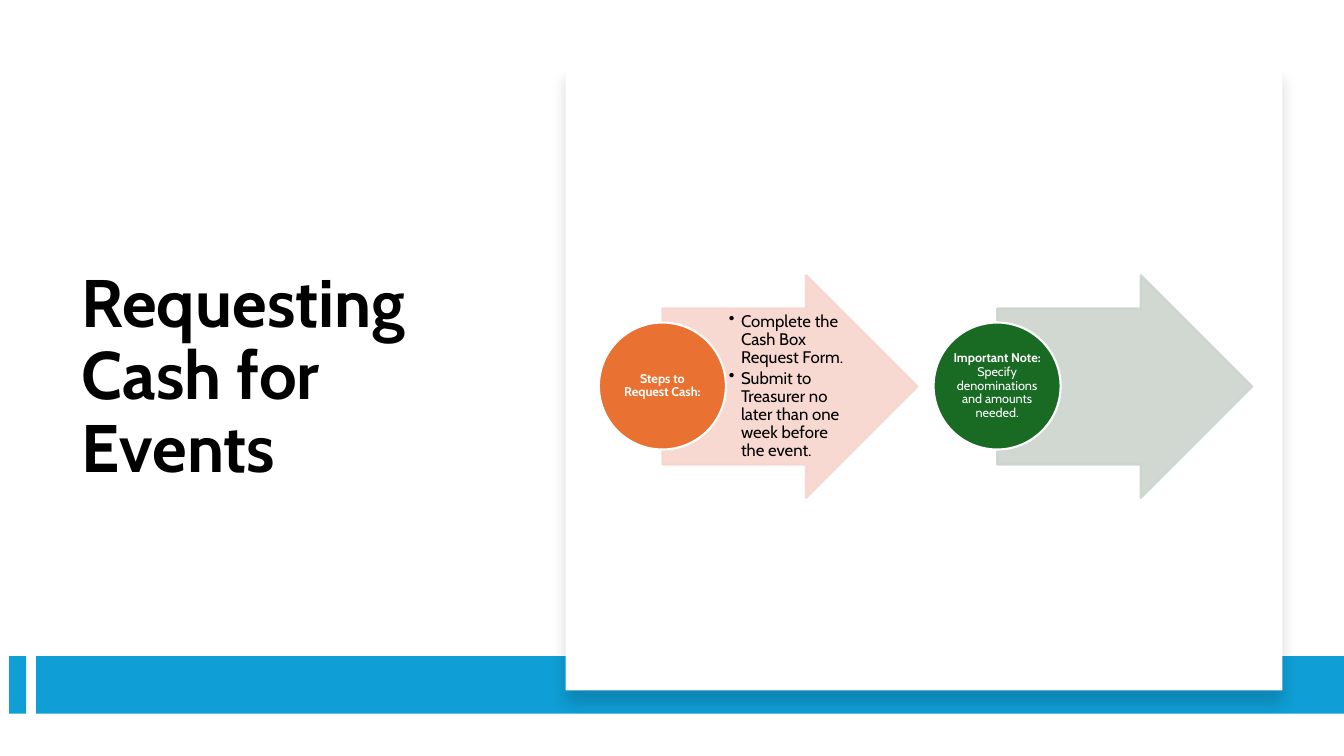
"""Build the slide about requesting cash for events."""
from dataclasses import dataclass

from lxml import etree
from pptx import Presentation
from pptx.dml.color import RGBColor
from pptx.enum.shapes import MSO_SHAPE
from pptx.enum.text import MSO_ANCHOR, MSO_AUTO_SIZE, PP_ALIGN
from pptx.oxml.ns import qn
from pptx.util import Inches, Pt

RECTANGLE = MSO_SHAPE.RECTANGLE
RIGHT_ARROW = MSO_SHAPE.RIGHT_ARROW
OVAL = MSO_SHAPE.OVAL
MIDDLE = MSO_ANCHOR.MIDDLE
NO_AUTO_SIZE = MSO_AUTO_SIZE.NONE
LEFT = PP_ALIGN.LEFT
CENTER = PP_ALIGN.CENTER


@dataclass(frozen=True)
class Theme:
    font: str = "Cabin"
    black: str = "000000"
    white: str = "FFFFFF"
    blue: str = "0F9ED5"
    orange: str = "E97132"
    green: str = "196B24"
    pale_orange: str = "F7D5CE"
    pale_green: str = "CCD4CD"
    title_size: float = 48
    bullet_size: float = 12
    circle_size: float = 9
    outline_width: float = 1.5
    line_spacing: float = 0.9
    arrow_opacity: int = 90


@dataclass(frozen=True)
class Box:
    left: float
    top: float
    width: float
    height: float

    def lengths(self) -> tuple:
        return tuple(Inches(value) for value in (self.left, self.top, self.width, self.height))


@dataclass(frozen=True)
class Step:
    heading: str
    detail: str
    bullets: tuple[str, ...]
    circle_color: str
    arrow_color: str


THEME = Theme()
TITLE = "Requesting Cash for Events"
TITLE_BOX = Box(0.71, 1.2, 4.15, 5.1)
BAND_BOXES = (Box(0.09, 6.51, 0.17, 0.57), Box(0.36, 6.51, 12.97, 0.57))
CARD_BOX = Box(5.61, 0.64, 7.11, 6.21)
FIRST_STEP_LEFT = 5.94
STEP_PITCH = 3.32
STEPS = (
    Step(
        "Steps to Request Cash:",
        "",
        (
            "Complete the Cash Box Request Form.",
            "Submit to Treasurer no later than one week before the event.",
        ),
        THEME.orange,
        THEME.pale_orange,
    ),
    Step(
        "Important Note: ",
        "Specify denominations and amounts needed.",
        (),
        THEME.green,
        THEME.pale_green,
    ),
)


def set_opacity(color_parent, percent: int) -> None:
    color = color_parent.find(".//" + qn("a:srgbClr"))
    etree.SubElement(color, qn("a:alpha"), val=str(percent * 1000))


def add_filled_shape(slide, kind, box: Box, fill: str, outline: str = ""):
    shape = slide.shapes.add_shape(kind, *box.lengths())
    shape.shadow.inherit = False
    shape.fill.solid()
    shape.fill.fore_color.rgb = RGBColor.from_string(fill)
    if outline:
        shape.line.color.rgb = RGBColor.from_string(outline)
        shape.line.width = Pt(THEME.outline_width)
    else:
        shape.line.fill.background()
    return shape


def style_run(run, size: float, color: str, bold: bool = False) -> None:
    run.font.name = THEME.font
    run.font.size = Pt(size)
    run.font.bold = bold
    run.font.color.rgb = RGBColor.from_string(color)


def prepare_frame(text_frame, margins: tuple[float, float, float, float]) -> None:
    text_frame.word_wrap = True
    text_frame.auto_size = NO_AUTO_SIZE
    text_frame.vertical_anchor = MIDDLE
    left, top, right, bottom = (Inches(margin) for margin in margins)
    text_frame.margin_left, text_frame.margin_top = left, top
    text_frame.margin_right, text_frame.margin_bottom = right, bottom


def add_title(slide) -> None:
    title = slide.shapes.title
    title.left, title.top, title.width, title.height = TITLE_BOX.lengths()
    title.text_frame.text = TITLE
    prepare_frame(title.text_frame, (0.1, 0.05, 0.1, 0.05))
    paragraph = title.text_frame.paragraphs[0]
    paragraph.alignment = LEFT
    paragraph.line_spacing = THEME.line_spacing
    style_run(paragraph.runs[0], THEME.title_size, THEME.black, True)


def add_card(slide) -> None:
    card = add_filled_shape(slide, RECTANGLE, CARD_BOX, THEME.white)
    effects = card._element.spPr.find(qn("a:effectLst"))
    shadow = etree.SubElement(
        effects, qn("a:outerShdw"),
        blurRad=str(Pt(11)), dist=str(Pt(10)), dir="5400000", algn="t", rotWithShape="0",
    )
    etree.SubElement(shadow, qn("a:srgbClr"), val=THEME.black)
    set_opacity(shadow, 15)


def add_arrow(slide, left: float, color: str) -> None:
    arrow = add_filled_shape(slide, RIGHT_ARROW, Box(left, 2.73, 2.53, 2.21), color, color)
    arrow.adjustments[0] = 0.7
    arrow.adjustments[1] = 0.5
    properties = arrow._element.spPr
    set_opacity(properties.find(qn("a:solidFill")), THEME.arrow_opacity)
    set_opacity(properties.find(qn("a:ln")), THEME.arrow_opacity)


def add_bullets(slide, left: float, bullets: tuple[str, ...]) -> None:
    text_frame = slide.shapes.add_textbox(*Box(left, 3.06, 1.23, 1.55).lengths()).text_frame
    text_frame.text = "\n".join(bullets)
    prepare_frame(text_frame, (0.03, 0.01, 0.02, 0.01))
    for paragraph in text_frame.paragraphs:
        paragraph.line_spacing = THEME.line_spacing
        paragraph.space_after = Pt(THEME.bullet_size * 0.15)
        properties = paragraph._p.get_or_add_pPr()
        properties.set("marL", str(Inches(0.12)))
        properties.set("indent", str(Inches(-0.12)))
        etree.SubElement(properties, qn("a:buChar"), char="•")
        style_run(paragraph.runs[0], THEME.bullet_size, THEME.black)


def add_circle(slide, left: float, step: Step) -> None:
    circle = add_filled_shape(
        slide, OVAL, Box(left, 3.2, 1.26, 1.26), step.circle_color, THEME.white
    )
    prepare_frame(circle.text_frame, (0.01, 0.01, 0.01, 0.01))
    paragraph = circle.text_frame.paragraphs[0]
    paragraph.text = step.heading
    paragraph.alignment = CENTER
    paragraph.line_spacing = THEME.line_spacing
    style_run(paragraph.runs[0], THEME.circle_size, THEME.white, True)
    if step.detail:
        detail = paragraph.add_run()
        detail.text = step.detail
        style_run(detail, THEME.circle_size, THEME.white)


def add_step(slide, left: float, step: Step) -> None:
    add_arrow(slide, left + 0.63, step.arrow_color)
    if step.bullets:
        add_bullets(slide, left + 1.26, step.bullets)
    add_circle(slide, left, step)


def main() -> None:
    presentation = Presentation()
    presentation.slide_width, presentation.slide_height = Inches(13.33), Inches(7.5)
    slide = presentation.slides.add_slide(presentation.slide_layouts.get_by_name("Title Only"))
    add_title(slide)
    for band_box in BAND_BOXES:
        add_filled_shape(slide, RECTANGLE, band_box, THEME.blue)
    add_card(slide)
    for index, step in enumerate(STEPS):
        add_step(slide, FIRST_STEP_LEFT + index * STEP_PITCH, step)
    presentation.save("out.pptx")


if __name__ == "__main__":
    main()
